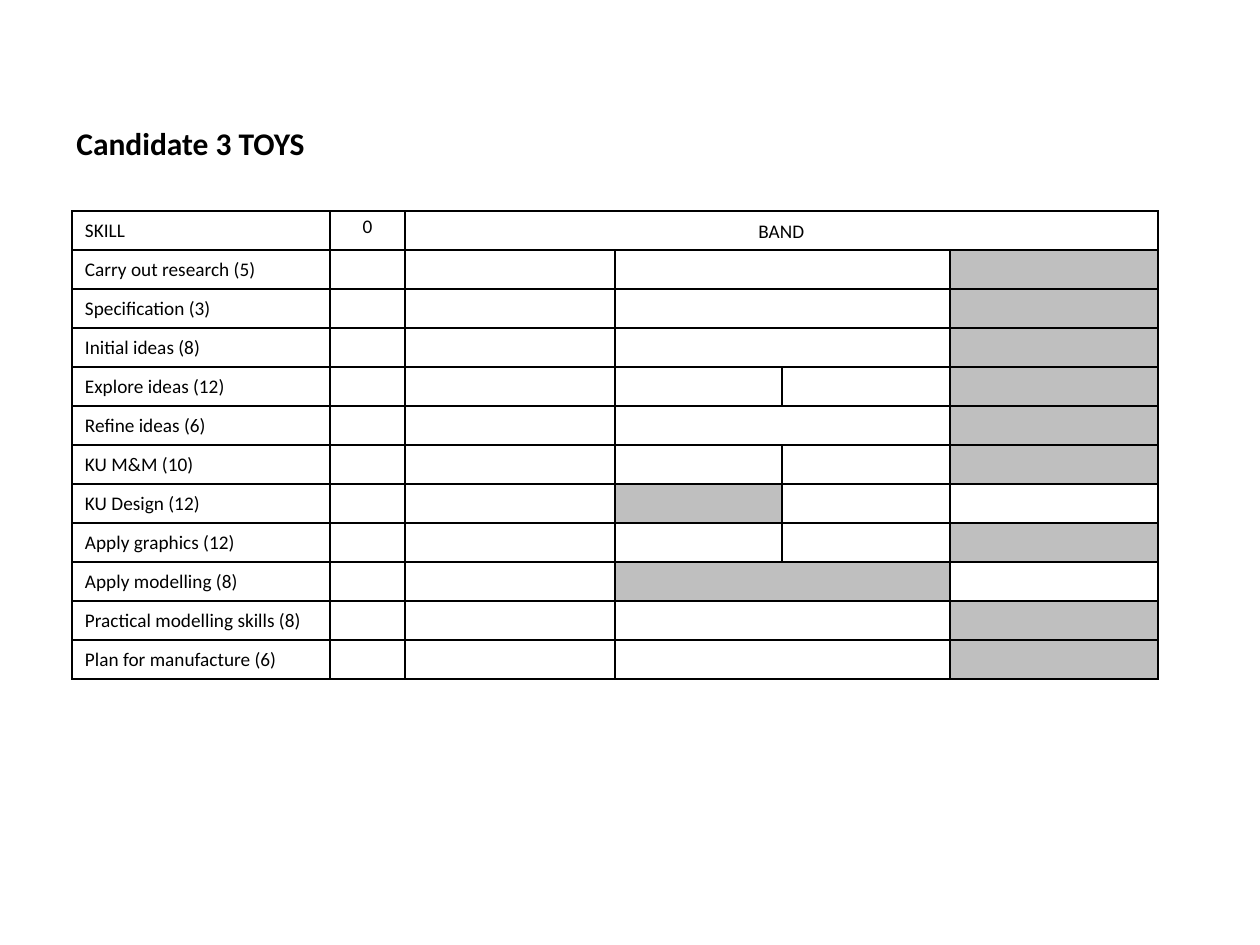
from lxml import etree
from pptx import Presentation
from pptx.dml.color import RGBColor
from pptx.enum.text import MSO_ANCHOR, PP_ALIGN
from pptx.oxml.ns import qn
from pptx.util import Emu, Pt

PX = 914400 // 126
BLACK = RGBColor(0x00, 0x00, 0x00)
WHITE = RGBColor(0xFF, 0xFF, 0xFF)
GREY = RGBColor(0xBF, 0xBF, 0xBF)
LEFT, CENTER = PP_ALIGN.LEFT, PP_ALIGN.CENTER
TOP = MSO_ANCHOR.TOP


def write(text_frame, text, size=11, bold=False, align=LEFT, spacing=1.15):
    paragraph = text_frame.paragraphs[0]
    paragraph.alignment = align
    paragraph.line_spacing = spacing
    run = paragraph.add_run()
    run.text = text
    run.font.name = "Calibri"
    run.font.size = Pt(size)
    run.font.bold = bold
    run.font.color.rgb = BLACK


def format_cell(cell, fill, margin_left=0, margin_top=0):
    cell.margin_left = Emu(margin_left * PX)
    cell.margin_top = Emu(margin_top * PX)
    cell.margin_right = cell.margin_bottom = 0
    cell.vertical_anchor = TOP
    properties = cell._tc.get_or_add_tcPr()
    for side in ("a:lnL", "a:lnR", "a:lnT", "a:lnB"):
        line = etree.SubElement(properties, qn(side), w=str(Pt(1)))
        solid = etree.SubElement(line, qn("a:solidFill"))
        etree.SubElement(solid, qn("a:srgbClr"), val=str(BLACK))
    cell.fill.solid()
    cell.fill.fore_color.rgb = fill


presentation = Presentation()
presentation.slide_width = Emu(1260 * PX)
presentation.slide_height = Emu(945 * PX)
slide = presentation.slides.add_slide(presentation.slide_layouts[6])

# Title
title = slide.shapes.add_textbox(64 * PX, 118 * PX, 260 * PX, 50 * PX)
title.text_frame.word_wrap = False
write(title.text_frame, "Candidate 3 TOYS", size=18, bold=True, spacing=1.0)

# Skills: label, whether the two middle columns are merged, grey columns
SKILLS = [
    ("Carry out research (5)", True, (5,)),
    ("Specification (3)", True, (5,)),
    ("Initial ideas (8)", True, (5,)),
    ("Explore ideas (12)", False, (5,)),
    ("Refine ideas (6)", True, (5,)),
    ("KU M&M (10)", False, (5,)),
    ("KU Design (12)", False, (3,)),
    ("Apply graphics (12)", False, (5,)),
    ("Apply modelling (8)", True, (3, 4)),
    ("Practical modelling skills (8)", True, (5,)),
    ("Plan for manufacture (6)", True, (5,)),
]
COLUMN_WIDTHS = [258, 75, 210, 167, 168, 208]
ROW_HEIGHT = 39
row_count = len(SKILLS) + 1

# Table grid
frame = slide.shapes.add_table(
    row_count, len(COLUMN_WIDTHS), 72 * PX, 211 * PX,
    sum(COLUMN_WIDTHS) * PX, row_count * ROW_HEIGHT * PX)
table = frame.table
table.first_row = False
table.horz_banding = False
for column, width in zip(table.columns, COLUMN_WIDTHS):
    column.width = Emu(width * PX)
for row in table.rows:
    row.height = Emu(ROW_HEIGHT * PX)

# Header row
for column_index in range(len(COLUMN_WIDTHS)):
    margin_left = 13 if column_index == 0 else 0
    margin_top = (5, 0, 6, 0, 0, 0)[column_index]
    format_cell(table.cell(0, column_index), WHITE, margin_left, margin_top)
table.cell(0, 2).merge(table.cell(0, 5))
write(table.cell(0, 0).text_frame, "SKILL")
write(table.cell(0, 1).text_frame, "0", align=CENTER)
write(table.cell(0, 2).text_frame, "BAND", align=CENTER)

# Skill rows
for row_index, (label, merged, grey_columns) in enumerate(SKILLS, start=1):
    for column_index in range(len(COLUMN_WIDTHS)):
        fill = GREY if column_index in grey_columns else WHITE
        margins = (13, 5) if column_index == 0 else (0, 0)
        format_cell(table.cell(row_index, column_index), fill, *margins)
    if merged:
        table.cell(row_index, 3).merge(table.cell(row_index, 4))
    write(table.cell(row_index, 0).text_frame, label)

presentation.save("out.pptx")
